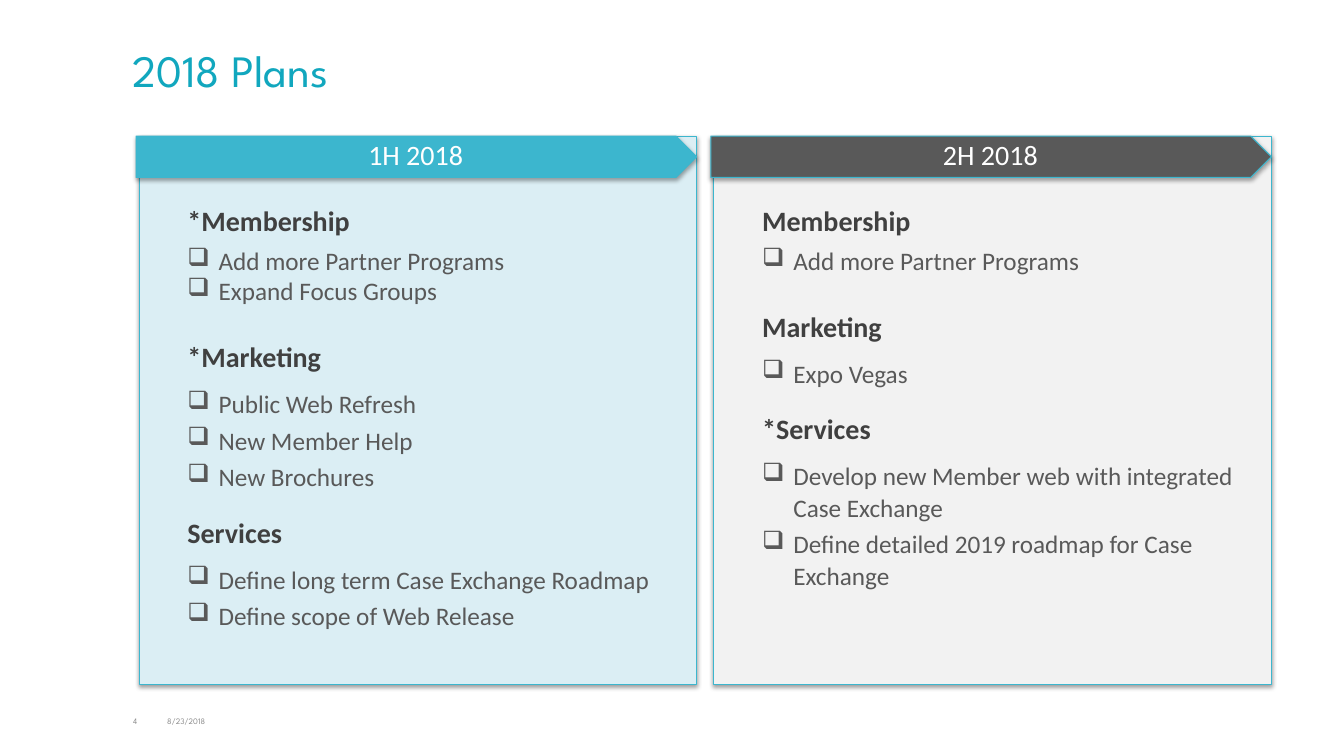
from dataclasses import dataclass

from lxml.etree import SubElement
from pptx import Presentation
from pptx.dml.color import RGBColor
from pptx.enum.shapes import MSO_SHAPE as SHAPE
from pptx.enum.text import MSO_ANCHOR as ANCHOR, PP_ALIGN as ALIGN
from pptx.oxml.ns import qn
from pptx.util import Inches, Pt


@dataclass(frozen=True)
class Theme:
    title_font: str = "League Spartan"
    body_font: str = "Calibri"
    title: str = "11A7BE"
    teal: str = "3CB6CE"
    pale_teal: str = "DBEEF4"
    pale_grey: str = "F2F2F2"
    heading: str = "404040"
    body: str = "595959"
    footer: str = "8C8C8C"
    white: str = "FFFFFF"
    title_size: float = 32
    heading_size: float = 20
    item_size: float = 18
    footer_size: float = 6


class PlanSlide:
    def __init__(self, prs, theme):
        self.theme = theme
        self.slide = prs.slides.add_slide(prs.slide_layouts[5])
        self.shapes = self.slide.shapes

    def frame(self, sp, insets, anchor):
        """Set the text frame's insets (left, top, right, bottom) and anchor."""
        tf = sp.text_frame
        sides = ("margin_left", "margin_top", "margin_right", "margin_bottom")
        formats = dict(zip(sides, map(Inches, insets)))
        formats |= {"word_wrap": True, "vertical_anchor": anchor}
        for name, value in formats.items():
            setattr(tf, name, value)
        return tf

    def add_text(self, p, text, size, color, font=None, bold=False, **spacing):
        for name, value in spacing.items():
            setattr(p, name, value)
        r = p.add_run()
        r.text = text
        formats = {"name": font or self.theme.body_font, "size": Pt(size), "bold": bold}
        for name, value in formats.items():
            setattr(r.font, name, value)
        r.font.color.rgb = RGBColor.from_string(color)

    def title(self, text):
        t, sp = self.theme, self.shapes.title
        box = {"left": 0.86, "top": 0.36, "width": 11.85, "height": 0.67}
        for name, value in box.items():
            setattr(sp, name, Inches(value))
        tf = self.frame(sp, (0.45, 0.06, 0.11, 0.06), ANCHOR.MIDDLE)
        self.add_text(tf.paragraphs[0], text, t.title_size, t.title, t.title_font,
                      alignment=ALIGN.LEFT)

    def textbox(self, box, anchor):
        sp = self.shapes.add_textbox(*map(Inches, box))
        return self.frame(sp, (0.1, 0.05, 0.1, 0.05), anchor)

    def footer(self, text, left, width, align):
        t = self.theme
        tf = self.textbox((left, 6.95, width, 0.4), ANCHOR.MIDDLE)
        self.add_text(tf.paragraphs[0], text, t.footer_size, t.footer, t.title_font,
                      alignment=align)

    def shadowed(self, kind, box, fill, distance, opacity):
        """Add a teal-outlined shape with a soft shadow straight below it."""
        sp = self.shapes.add_shape(kind, *map(Inches, box))
        sp.fill.solid()
        sp.fill.fore_color.rgb = RGBColor.from_string(fill)
        sp.line.color.rgb = RGBColor.from_string(self.theme.teal)
        sp.line.width = Pt(0.75)
        sp.shadow.inherit = False
        effects = sp._element.spPr.find(qn("a:effectLst"))
        shadow = SubElement(effects, qn("a:outerShdw"), blurRad=str(Pt(3.1)),
                            dist=str(Pt(distance)), dir="5400000", rotWithShape="0")
        black = SubElement(shadow, qn("a:srgbClr"), val="000000")
        SubElement(black, qn("a:alpha"), val=str(opacity * 1000))
        return sp

    def banner(self, text, left, fill):
        t = self.theme
        sp = self.shadowed(SHAPE.PENTAGON, (left, 1.35, 5.56, 0.41), fill, 1.8, 35)
        tf = self.frame(sp, (0.12, 0.06, 0.03, 0.06), ANCHOR.MIDDLE)
        self.add_text(tf.paragraphs[0], text, t.heading_size, t.white,
                      alignment=ALIGN.CENTER, line_spacing=0.9)

    def indent(self, p, left, hanging=0.0, bullet=None):
        pPr = p._p.get_or_add_pPr()
        pPr.set("marL", str(Inches(left)))
        pPr.set("indent", str(-Inches(hanging)))
        if bullet:
            SubElement(pPr, qn("a:buChar"), char=bullet)

    def plan(self, left, sections):
        """Set headings with checklists; the first checklist is set tight."""
        t = self.theme
        tf = self.textbox((left, 1.95, 5.25, 4.81), ANCHOR.TOP)
        heading_gaps = (0, 23, 15.5)
        for i, ((heading, items), gap) in enumerate(zip(sections, heading_gaps)):
            p = tf.add_paragraph() if i else tf.paragraphs[0]
            self.indent(p, 0.38)
            self.add_text(p, heading, t.heading_size, t.heading, bold=True,
                          line_spacing=1.05, space_before=Pt(gap), space_after=Pt(6))
            for item in items:
                p = tf.add_paragraph()
                self.indent(p, 0.69, 0.31, "❑")
                self.add_text(p, item, t.item_size, t.body,
                              line_spacing=1.05 if i else 1.0,
                              space_before=Pt(3.6 if i else 0))

    def half_year(self, left, label, banner_fill, panel_fill, sections):
        panel_left = left + 0.03
        self.shadowed(SHAPE.RECTANGLE, (panel_left, 1.35, 5.53, 5.44), panel_fill, 1.6, 38)
        self.banner(label, left, banner_fill)
        self.plan(panel_left, sections)


FIRST_HALF = [
    ("*Membership", ["Add more Partner Programs", "Expand Focus Groups"]),
    ("*Marketing", ["Public Web Refresh", "New Member Help", "New Brochures"]),
    ("Services", ["Define long term Case Exchange Roadmap", "Define scope of Web Release"]),
]
SECOND_HALF = [
    ("Membership", ["Add more Partner Programs"]),
    ("Marketing", ["Expo Vegas"]),
    ("*Services", ["Develop new Member web with integrated Case Exchange",
                   "Define detailed 2019 roadmap for Case Exchange"]),
]


def main():
    prs = Presentation()
    prs.slide_width, prs.slide_height = Inches(13.33), Inches(7.5)
    theme = Theme()
    s = PlanSlide(prs, theme)
    s.title("2018 Plans")
    s.footer("4", 0.46, 1, ALIGN.RIGHT)
    s.footer("8/23/2018", 1.56, 3.11, ALIGN.LEFT)
    s.half_year(1.35, "1H 2018", theme.teal, theme.pale_teal, FIRST_HALF)
    s.half_year(7.05, "2H 2018", theme.body, theme.pale_grey, SECOND_HALF)
    prs.save("out.pptx")


if __name__ == "__main__":
    main()
